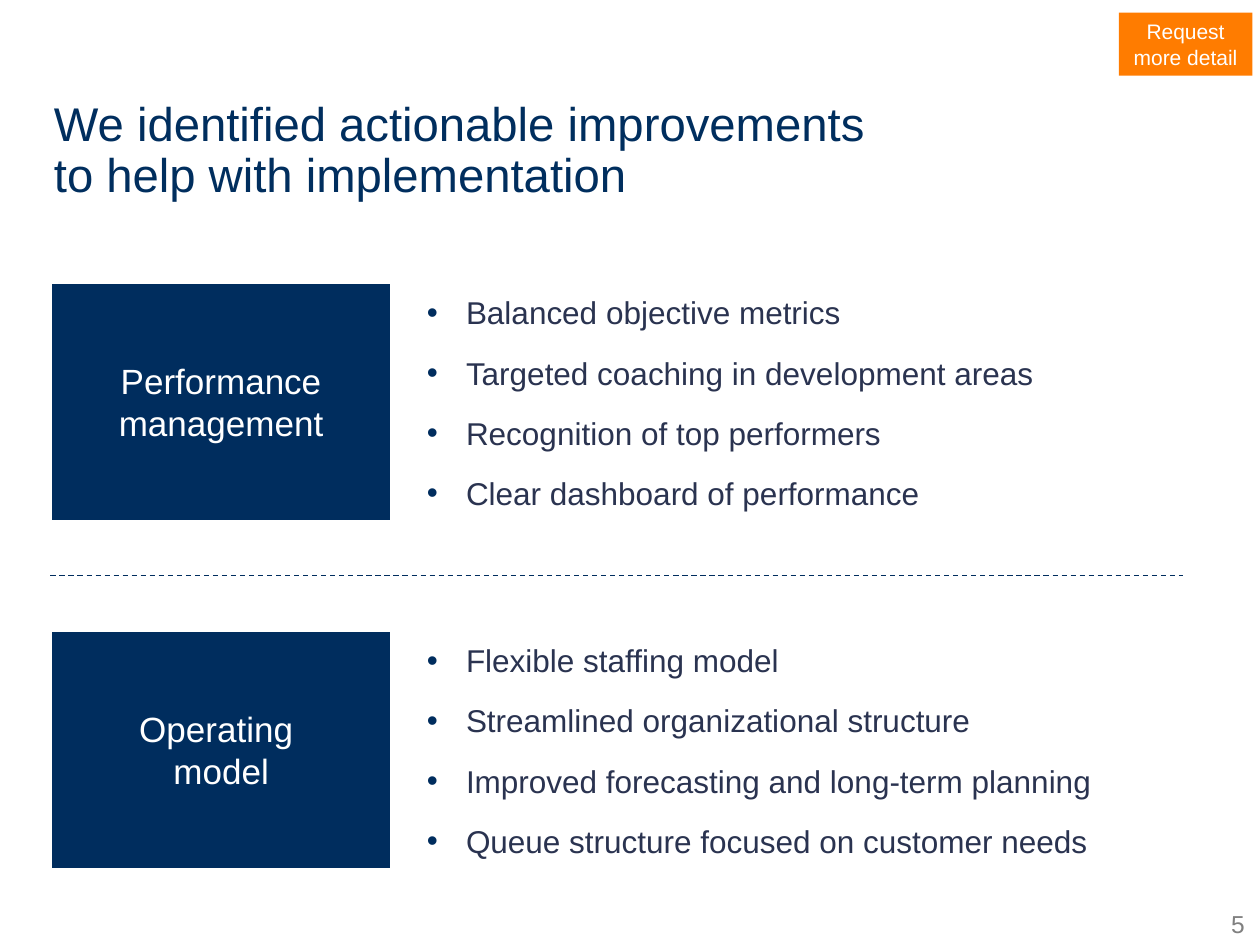
from dataclasses import dataclass

from pptx import Presentation
from pptx.dml.color import RGBColor
from pptx.enum.dml import MSO_LINE
from pptx.enum.shapes import MSO_CONNECTOR, MSO_SHAPE
from pptx.enum.text import MSO_ANCHOR, PP_ALIGN
from pptx.oxml.ns import qn
from pptx.util import Inches, Pt
from lxml.etree import SubElement


@dataclass(frozen=True)
class Theme:
    """Colours, font and type sizes of the slide."""
    font: str = "Arial"
    navy: str = "002D5E"
    title: str = "002E5E"
    orange: str = "FF7C00"
    body: str = "2A3350"
    grey: str = "808080"
    white: str = "FFFFFF"
    title_size: int = 27
    label_size: int = 20
    body_size: int = 18
    number_size: int = 14
    tag_size: int = 12


THEME = Theme()
SECTIONS = [
    (["Performance", "management"], [
        "Balanced objective metrics",
        "Targeted coaching in development areas",
        "Recognition of top performers",
        "Clear dashboard of performance",
    ]),
    (["Operating ", "model"], [
        "Flexible staffing model",
        "Streamlined organizational structure",
        "Improved forecasting and long-term planning",
        "Queue structure focused on customer needs",
    ]),
]


def color(value):
    """Turn a hex string into a colour."""
    return RGBColor.from_string(value)


def write(tf, lines, size, ink, align=PP_ALIGN.LEFT):
    """Fill a text frame with one formatted paragraph per line."""
    tf.word_wrap = True
    tf.text = "\n".join(lines)
    for p in tf.paragraphs:
        p.alignment = align
        for r in p.runs:
            r.font.name = THEME.font
            r.font.size = Pt(size)
            r.font.color.rgb = color(ink)


def add_text(slide, box, text, size, ink, spacing, align=PP_ALIGN.LEFT):
    """Place a single-paragraph text box and return its text frame."""
    tf = slide.shapes.add_textbox(*map(Inches, box)).text_frame
    write(tf, [text], size, ink, align)
    tf.paragraphs[0].line_spacing = spacing
    return tf


def add_block(slide, box, lines, size, fill):
    """Place a filled rectangle with centred white text."""
    s = slide.shapes.add_shape(MSO_SHAPE.RECTANGLE, *map(Inches, box))
    s.shadow.inherit = False
    s.fill.solid()
    s.fill.fore_color.rgb = color(fill)
    s.line.fill.background()
    s.text_frame.vertical_anchor = MSO_ANCHOR.MIDDLE
    write(s.text_frame, lines, size, THEME.white, PP_ALIGN.CENTER)
    return s


def add_bullets(slide, box, items):
    """Place a bulleted list with navy bullets."""
    tf = slide.shapes.add_textbox(*map(Inches, box)).text_frame
    write(tf, items, THEME.body_size, THEME.body)
    for i, p in enumerate(tf.paragraphs):
        if i:
            p.space_before = Pt(12.8)
        pPr = p._p.get_or_add_pPr()
        pPr.set("marL", str(Inches(0.31)))
        pPr.set("indent", str(-Inches(0.31)))
        ink = SubElement(pPr, qn("a:buClr"))
        SubElement(ink, qn("a:srgbClr"), val=THEME.navy)
        SubElement(pPr, qn("a:buFont"), typeface=THEME.font)
        SubElement(pPr, qn("a:buChar"), char="•")


def add_section(slide, box, label, items):
    """Place a label block with its list to the right."""
    x, y, w, h = box
    label_w, list_x = 2.71, 2.89
    s = add_block(slide, (x, y, label_w, h), label, THEME.label_size, THEME.navy)
    s.line.color.rgb = color(THEME.white)
    s.line.width = Pt(2)
    add_bullets(slide, (x + list_x, y + 0.04, w - list_x, h - 0.08), items)


def add_divider(slide, x, y, w):
    """Draw a dashed horizontal line."""
    ends = map(Inches, (x, y, x + w, y))
    s = slide.shapes.add_connector(MSO_CONNECTOR.STRAIGHT, *ends)
    s.line.color.rgb = color(THEME.navy)
    s.line.width = Pt(0.75)
    s.line.dash_style = MSO_LINE.DASH
    SubElement(s._element.spPr, qn("a:effectLst"))


def add_page_number(slide, box, number):
    """Place the page number without margins."""
    tf = add_text(slide, box, number, THEME.number_size, THEME.grey, 0.7,
                  PP_ALIGN.RIGHT)
    tf.word_wrap = False
    tf.margin_left = tf.margin_right = tf.margin_top = tf.margin_bottom = 0


def main():
    """Build the slide and save it."""
    prs = Presentation()
    prs.slide_width, prs.slide_height = Inches(10), Inches(7.5)
    slide = prs.slides.add_slide(prs.slide_layouts[6])

    add_page_number(slide, (9.64, 7.28, 0.24, 0.17), "5")
    add_text(slide, (0.33, 0.75, 6.87, 0.56),
             "We identified actionable improvements to help with implementation",
             THEME.title_size, THEME.title, 0.9)
    add_block(slide, (8.88, 0.1, 1.06, 0.5), ["Request more detail"],
              THEME.tag_size, THEME.orange)

    left, top, height, pitch = 0.4, 2.24, 1.9, 2.76
    for i, (label, items) in enumerate(SECTIONS):
        add_section(slide, (left, top + i * pitch, 9.5, height), label, items)
    add_divider(slide, left, top + (height + pitch) / 2, 8.99)

    prs.save("out.pptx")


if __name__ == "__main__":
    main()
